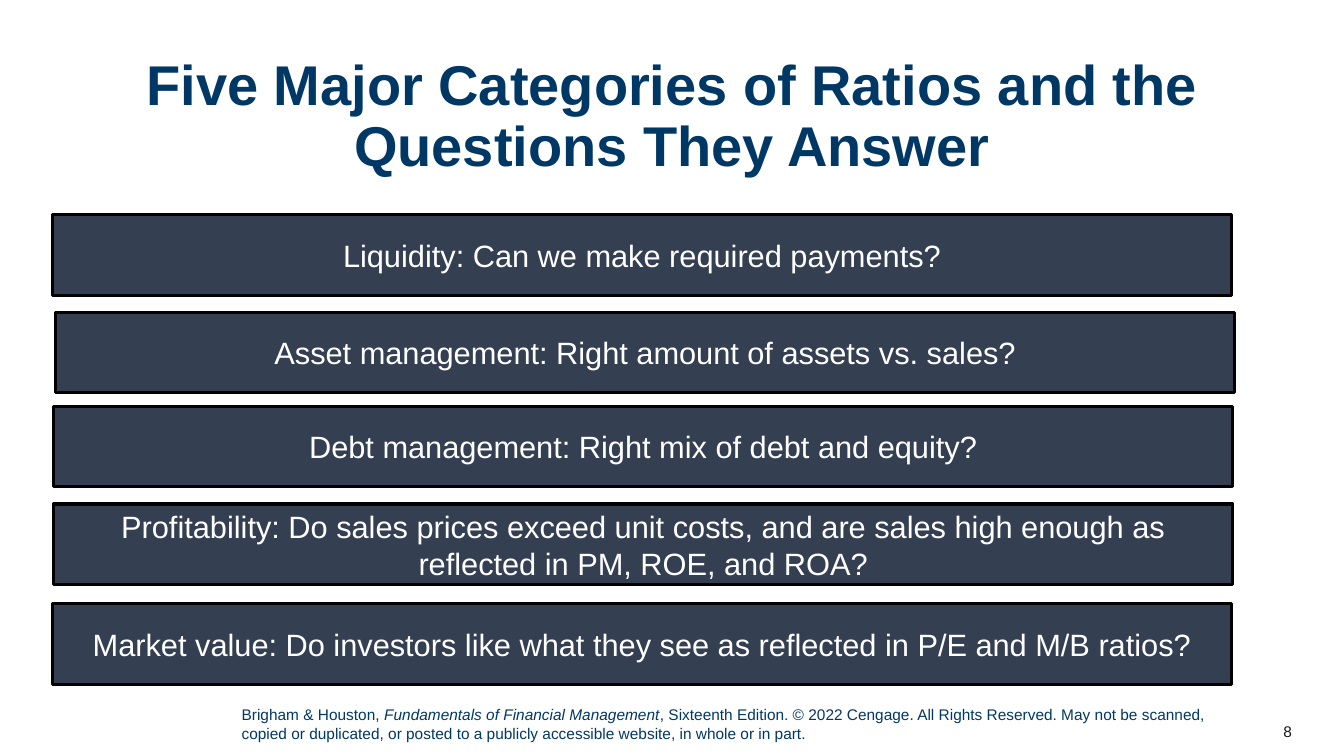
from pptx import Presentation
from pptx.dml.color import RGBColor
from pptx.enum.shapes import MSO_SHAPE
from pptx.enum.text import MSO_ANCHOR, PP_ALIGN
from pptx.util import Cm, Pt

LEFT, CENTER, RIGHT = PP_ALIGN.LEFT, PP_ALIGN.CENTER, PP_ALIGN.RIGHT
TOP, MIDDLE = MSO_ANCHOR.TOP, MSO_ANCHOR.MIDDLE
RECTANGLE = MSO_SHAPE.RECTANGLE

NAVY, SLATE, BLACK, WHITE, INK = "003865", "343F52", "000000", "FFFFFF", "181717"
FONT = "Arial"

TITLE = "Five Major Categories of Ratios and the Questions They Answer"
# (left, top, question), lengths in centimetres
CATEGORIES = [
    (1.32, 5.41, "Liquidity: Can we make required payments?"),
    (1.40, 7.87, "Asset management: Right amount of assets vs. sales?"),
    (1.35, 10.24, "Debt management: Right mix of debt and equity?"),
    (1.35, 12.70, "Profitability: Do sales prices exceed unit costs, and are sales "
                  "high enough as reflected in PM, ROE, and ROA?"),
    (1.32, 15.21, "Market value: Do investors like what they see as reflected in "
                  "P/E and M/B ratios?"),
]
BAR_WIDTH, BAR_HEIGHT = 29.72, 2.03
# (text, italic)
COPYRIGHT = [
    ("Brigham & Houston, ", False),
    ("Fundamentals of Financial Management", True),
    (", Sixteenth Edition. © 2022 Cengage. All Rights Reserved. May not be scanned, "
     "copied or duplicated, or posted to a publicly accessible website, in whole or "
     "in part.", False),
]
PAGE_NUMBER = "8"


def color(value):
    return RGBColor.from_string(value)


def write(box, spans, size, ink, align=LEFT, anchor=TOP, bold=False, spacing=None):
    """Fill a box with one paragraph of (text, italic) spans."""
    frame = box.text_frame
    frame.word_wrap = True
    frame.vertical_anchor = anchor
    para = frame.paragraphs[0]
    para.alignment = align
    para.line_spacing = spacing
    for text, italic in spans:
        span = para.add_run()
        span.text = text
        font = span.font
        font.name, font.size = FONT, Pt(size)
        font.bold, font.italic = bold, italic
        font.color.rgb = color(ink)


def text_box(page, place, spans, size, ink, **layout):
    box = page.shapes.add_textbox(*map(Cm, place))
    write(box, spans, size, ink, **layout)


def category_bar(page, left, top, question):
    bar = page.shapes.add_shape(
        RECTANGLE, Cm(left), Cm(top), Cm(BAR_WIDTH), Cm(BAR_HEIGHT))
    bar.shadow.inherit = False
    bar.fill.solid()
    bar.fill.fore_color.rgb = color(SLATE)
    bar.line.color.rgb = color(BLACK)
    bar.line.width = Pt(2.25)
    write(bar, [(question, False)], 22, WHITE, align=CENTER, anchor=MIDDLE)


def main():
    deck = Presentation()
    deck.slide_width, deck.slide_height = Cm(33.87), Cm(19.05)
    page = deck.slides.add_slide(deck.slide_layouts[6])

    text_box(page, (30.78, 17.91, 2.03, 1.02), [(PAGE_NUMBER, False)], 11, INK,
             align=RIGHT, anchor=MIDDLE)
    text_box(page, (5.84, 17.65, 24.89, 1.19), COPYRIGHT, 11, NAVY)
    text_box(page, (1.32, 1.32, 31.22, 3.38), [(TITLE, False)], 40, NAVY,
             align=CENTER, bold=True, spacing=0.9)
    for left, top, question in CATEGORIES:
        category_bar(page, left, top, question)

    deck.save("out.pptx")


if __name__ == "__main__":
    main()
